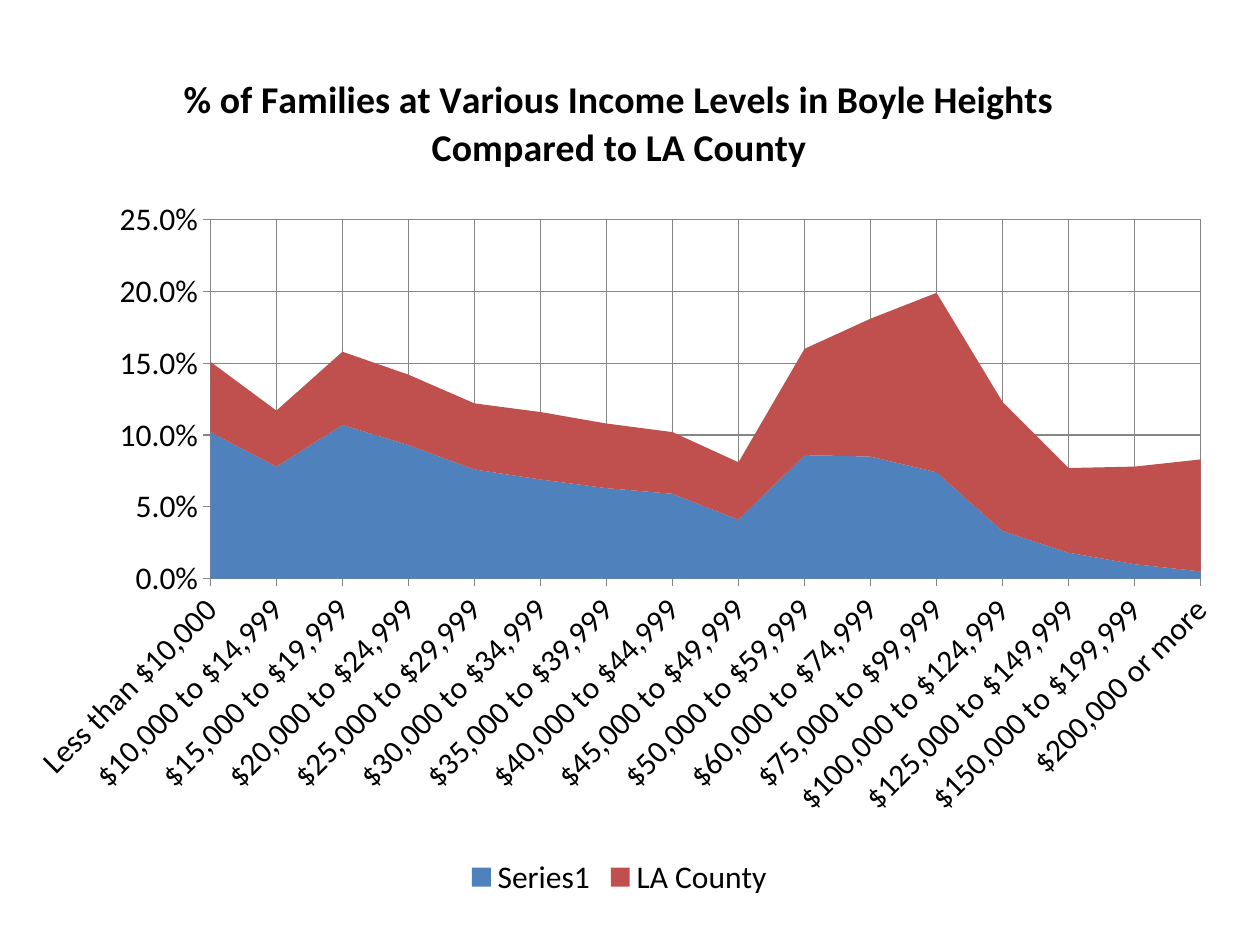
from dataclasses import dataclass
from itertools import pairwise

from lxml.etree import SubElement
from pptx import Presentation
from pptx.chart.data import CategoryChartData
from pptx.dml.color import RGBColor
from pptx.enum.chart import XL_CHART_TYPE, XL_LEGEND_POSITION, XL_TICK_MARK
from pptx.oxml.ns import qn
from pptx.util import Inches, Pt


@dataclass(frozen=True)
class Theme:
    font: str = "Calibri"
    text: str = "000000"
    grid: str = "868686"
    bands: tuple = ("4F81BD", "C0504D")
    title_size: float = 21.6
    label_size: float = 18
    line_width: float = 0.75


class SlideBuilder:
    def __init__(self, deck, theme):
        self.deck = deck
        self.theme = theme
        self.slide = deck.slides.add_slide(deck.slide_layouts[6])

    def style_font(self, font, size, bold=False):
        font.name = self.theme.font
        font.size = Pt(size)
        font.bold = bold
        font.color.rgb = RGBColor.from_string(self.theme.text)

    def style_line(self, line):
        line.color.rgb = RGBColor.from_string(self.theme.grid)
        line.width = Pt(self.theme.line_width)

    def area_chart(self, shares, heading, categories, series):
        data = CategoryChartData(number_format="0.0%")
        data.categories = categories
        for name, values in series.items():
            data.add_series(name, values)
        width, height = self.deck.slide_width, self.deck.slide_height
        left, top, across, down = (
            int(share * length)
            for share, length in zip(shares, (width, height, width, height))
        )
        chart = self.slide.shapes.add_chart(
            XL_CHART_TYPE.AREA_STACKED, left, top, across, down, data
        ).chart
        self.style_font(chart.font, self.theme.label_size)
        self.chart_title(chart, heading)
        for band, color in zip(chart.plots[0].series, self.theme.bands):
            band.format.fill.solid()
            band.format.fill.fore_color.rgb = RGBColor.from_string(color)
        chart.has_legend = True
        chart.legend.position = XL_LEGEND_POSITION.BOTTOM
        chart.legend.include_in_layout = False
        for axis in (chart.category_axis, chart.value_axis):
            self.chart_axis(axis)
        return chart

    def chart_title(self, chart, heading):
        chart.has_title = True
        chart.chart_title.include_in_layout = False
        frame = chart.chart_title.text_frame
        frame.text = heading
        self.style_font(frame.paragraphs[0].runs[0].font, self.theme.title_size, True)

    def chart_axis(self, axis):
        axis.has_major_gridlines = True
        axis.major_tick_mark = XL_TICK_MARK.OUTSIDE
        axis.minor_tick_mark = XL_TICK_MARK.NONE
        self.style_font(axis.tick_labels.font, self.theme.label_size)
        self.style_line(axis.format.line)
        self.style_line(axis.major_gridlines.format.line)

    def percent_scale(self, axis, maximum, step):
        axis.minimum_scale = 0
        axis.maximum_scale = maximum
        axis.major_unit = step
        axis.tick_labels.number_format = "0.0%"
        axis.tick_labels.number_format_is_linked = False
        axis._element.find(qn("c:crossBetween")).set("val", "midCat")

    def slant_labels(self, axis, degrees):
        body = axis._element.find(qn("c:txPr")).find(qn("a:bodyPr"))
        body.set("rot", str(degrees * 60000))
        body.set("vert", "horz")

    def place_plot(self, chart, shares):
        area = chart._chartSpace.chart.plotArea
        layout = area.find(qn("c:layout"))
        if layout is None:
            layout = SubElement(area, qn("c:layout"))
            area.insert(0, layout)
        manual = SubElement(layout, qn("c:manualLayout"))
        settings = {"layoutTarget": "inner", "xMode": "edge", "yMode": "edge"}
        settings.update(zip("xywh", shares))
        for tag, value in settings.items():
            SubElement(manual, qn(f"c:{tag}")).set("val", str(value))


def income_levels():
    bounds = [*range(10, 51, 5), 60, 75, 100, 125, 150, 200]
    ranges = [f"${low},000 to ${high - 1},999" for low, high in pairwise(bounds)]
    levels = ["Less than $10,000", *ranges, "$200,000 or more"]
    return [f"  {level}" for level in levels]


def main():
    deck = Presentation()
    deck.slide_width, deck.slide_height = Inches(10), Inches(7.5)
    builder = SlideBuilder(deck, Theme())
    families = {
        "Series1": (0.102, 0.078, 0.107, 0.093, 0.076, 0.069, 0.063, 0.059,
                    0.041, 0.086, 0.085, 0.074, 0.033, 0.018, 0.01, 0.005),
        "LA County": (0.049, 0.039, 0.051, 0.049, 0.046, 0.047, 0.045, 0.043,
                      0.04, 0.074, 0.096, 0.125, 0.09, 0.059, 0.068, 0.078),
    }
    chart_width, chart_height = 9.83, 6.83
    chart = builder.area_chart(
        (0, 1 / 22.5, chart_width / 10, chart_height / 7.5),
        "% of Families at Various Income Levels in Boyle Heights Compared to LA County",
        income_levels(),
        families,
    )
    builder.percent_scale(chart.value_axis, 0.25, 0.05)
    builder.slant_labels(chart.category_axis, -45)
    builder.place_plot(
        chart,
        (1.67 / chart_width, 1.41 / chart_height,
         7.86 / chart_width, 2.85 / chart_height),
    )
    deck.save("out.pptx")


if __name__ == "__main__":
    main()
